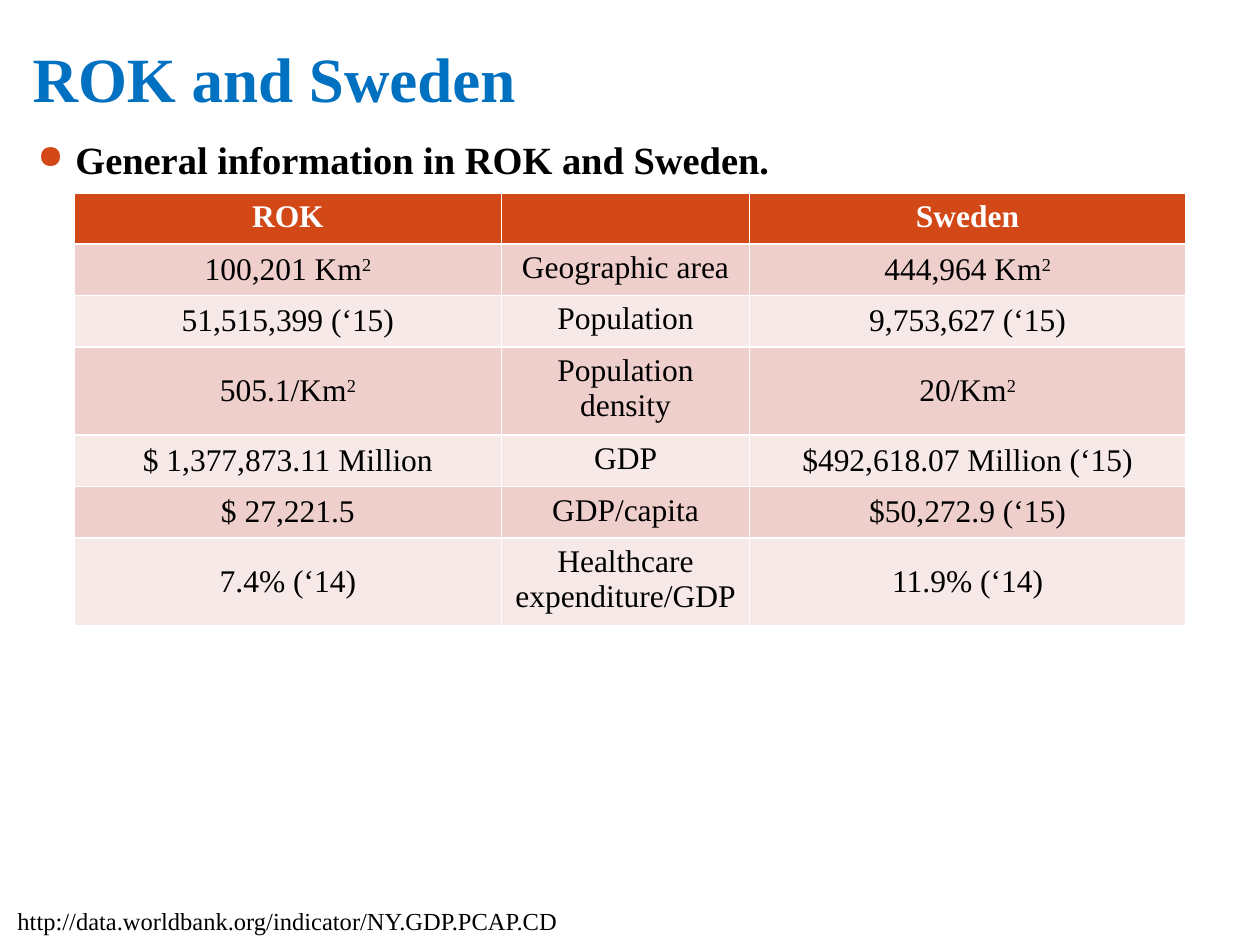
"""Build the ROK and Sweden comparison slide."""
from lxml import etree
from pptx import Presentation
from pptx.dml.color import RGBColor
from pptx.enum.text import MSO_ANCHOR, PP_ALIGN
from pptx.oxml.ns import qn
from pptx.util import Inches, Pt

MIDDLE, TOP = MSO_ANCHOR.MIDDLE, MSO_ANCHOR.TOP
CENTER = PP_ALIGN.CENTER
FONT = "Times New Roman"
BLUE = RGBColor(0x00, 0x70, 0xC0)
ORANGE = RGBColor(0xD3, 0x48, 0x17)
ROSE = RGBColor(0xEF, 0xCF, 0xCC)
PALE = RGBColor(0xF7, 0xE9, 0xE8)
BLACK = RGBColor(0, 0, 0)
WHITE = RGBColor(255, 255, 255)

prs = Presentation()
prs.slide_width, prs.slide_height = Inches(10), Inches(7.5)
COL, ROW = prs.slide_width / 100, prs.slide_height / 100
s = prs.slides.add_slide(prs.slide_layouts[6])


def style(r, size, color, bold=False):
    r.font.name, r.font.size = FONT, Pt(size)
    r.font.color.rgb, r.font.bold = color, bold


def add_text(x, y, w, h, text, size, color, bold=False):
    sp = s.shapes.add_textbox(int(x * COL), int(y * ROW), int(w * COL), int(h * ROW))
    tf = sp.text_frame
    tf.word_wrap = True
    tf.text = text
    style(tf.paragraphs[0].runs[0], size, color, bold)
    return tf


tf = add_text(1.6, 2.67, 96.1, 11.6, "ROK and Sweden", 36, BLUE, True)
tf.vertical_anchor = MIDDLE
tf.margin_bottom = Inches(0.1)

tf = add_text(2, 13.7, 94.5, 72.4, "General information in ROK and Sweden.", 22, BLACK, True)
pPr = tf.paragraphs[0]._p.get_or_add_pPr()
pPr.set("marL", str(Inches(0.3)))
pPr.set("indent", str(-Inches(0.3)))
color = etree.SubElement(pPr, qn("a:buClr"))
etree.SubElement(color, qn("a:srgbClr"), val=str(ORANGE))
etree.SubElement(pPr, qn("a:buSzPct"), val="85000")
etree.SubElement(pPr, qn("a:buChar"), char="●")

rows = [
    ("ROK", "", "Sweden"),
    ("100,201 Km²", "Geographic area", "444,964 Km²"),
    ("51,515,399 (‘15)", "Population", "9,753,627 (‘15)"),
    ("505.1/Km²", "Population density", "20/Km²"),
    ("$ 1,377,873.11 Million", "GDP", "$492,618.07 Million (‘15)"),
    ("$ 27,221.5", "GDP/capita", "$50,272.9 (‘15)"),
    ("7.4% (‘14)", "Healthcare expenditure/GDP", "11.9% (‘14)"),
]
widths = (33.9, 19.7, 34.6)
row_height = 5.44
table = s.shapes.add_table(
    len(rows), len(widths), int(5.9 * COL), int(20.4 * ROW),
    int(sum(widths) * COL), int(len(rows) * row_height * ROW)).table
for column, width in zip(table.columns, widths):
    column.width = int(width * COL)

for i, row in enumerate(rows):
    header = i == 0
    fill = ORANGE if header else (PALE, ROSE)[i % 2]
    for j, text in enumerate(row):
        cell = table.cell(i, j)
        cell.fill.solid()
        cell.fill.fore_color.rgb = fill
        cell.vertical_anchor = TOP if header or j == 1 else MIDDLE
        p = cell.text_frame.paragraphs[0]
        p.alignment = CENTER
        base, square, _ = text.partition("²")
        if base:
            p.text = base
        if square:
            r = p.add_run()
            r.text = "2"
            r._r.get_or_add_rPr().set("baseline", "30000")
        for r in p.runs:
            style(r, 18, WHITE if header else BLACK, header)

add_text(0.4, 95.2, 81.9, 4.53, "http://data.worldbank.org/indicator/NY.GDP.PCAP.CD", 14, BLACK)

prs.save("out.pptx")
